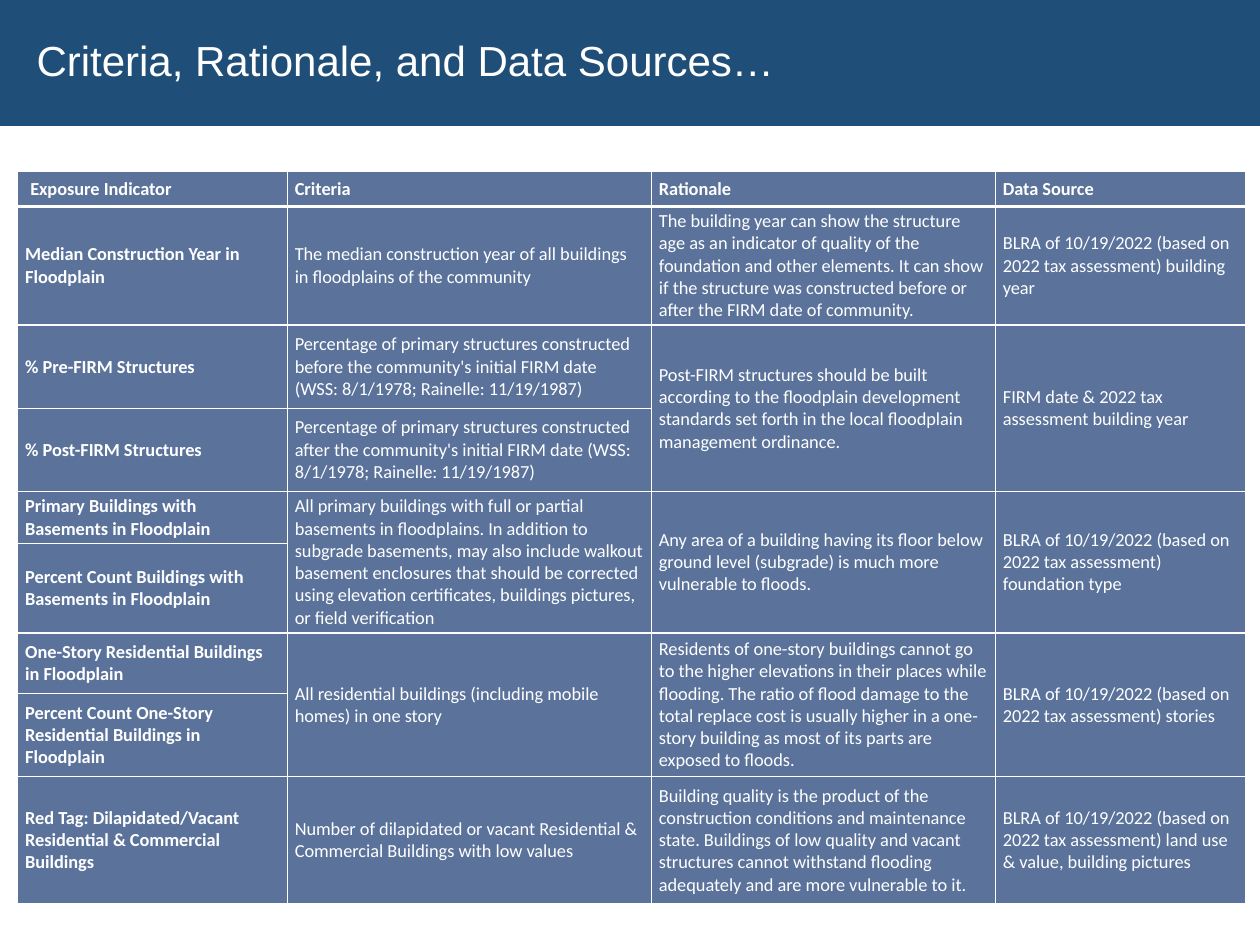
"""Build the slide listing exposure criteria, rationale and data sources."""
from lxml import etree
from pptx import Presentation
from pptx.dml.color import RGBColor
from pptx.enum import shapes, text
from pptx.oxml import ns
from pptx.util import Inches, Pt


def color(hex_code):
    return RGBColor.from_string(hex_code)


def add_border(cell, side, width, position):
    line = etree.Element(ns.qn(f"a:ln{side}"), w=str(Pt(width)))
    fill = etree.SubElement(line, ns.qn("a:solidFill"))
    etree.SubElement(fill, ns.qn("a:srgbClr"), val="FFFFFF")
    cell._tc.get_or_add_tcPr().insert(position, line)


BLRA = "BLRA of 10/19/2022 (based on 2022 tax assessment) "
FIRM = ("Percentage of primary structures constructed {} the community's initial "
        "FIRM date (WSS: 8/1/1978; Rainelle: 11/19/1987)")

# None continues the cell above
ROWS = [
    (0.27, "Exposure Indicator", "Criteria", "Rationale", "Data Source"),
    (0.94, "Median Construction Year in Floodplain",
     "The median construction year of all buildings in floodplains of the community",
     "The building year can show the structure age as an indicator of quality of the "
     "foundation and other elements. It can show if the structure was constructed "
     "before or after the FIRM date of community.",
     BLRA + "building year"),
    (0.66, "% Pre-FIRM Structures", FIRM.format("before"),
     "Post-FIRM structures should be built according to the floodplain development "
     "standards set forth in the local floodplain management ordinance.",
     "FIRM date & 2022 tax assessment building year"),
    (0.66, "% Post-FIRM Structures", FIRM.format("after"), None, None),
    (0.41, "Primary Buildings with Basements in Floodplain",
     "All primary buildings with full or partial basements in floodplains. In addition "
     "to subgrade basements, may also include walkout basement enclosures that should "
     "be corrected using elevation certificates, buildings pictures, or field "
     "verification",
     "Any area of a building having its floor below ground level (subgrade) is much "
     "more vulnerable to floods.",
     BLRA + "foundation type"),
    (0.71, "Percent Count Buildings with Basements in Floodplain", None, None, None),
    (0.48, "One-Story Residential Buildings in Floodplain",
     "All residential buildings (including mobile homes) in one story",
     "Residents of one-story buildings cannot go to the higher elevations in their "
     "places while flooding. The ratio of flood damage to the total replace cost is "
     "usually higher in a one-story building as most of its parts are exposed to floods.",
     BLRA + "stories"),
    (0.66, "Percent Count One-Story Residential Buildings in Floodplain",
     None, None, None),
    (1.01, "Red Tag: Dilapidated/Vacant Residential & Commercial Buildings",
     "Number of dilapidated or vacant Residential & Commercial Buildings with low values",
     "Building quality is the product of the construction conditions and maintenance "
     "state. Buildings of low quality and vacant structures cannot withstand flooding "
     "adequately and are more vulnerable to it.",
     BLRA + "land use & value, building pictures"),
]
COLUMN_WIDTHS = [2.14, 2.89, 2.73, 1.99]

deck = Presentation()
deck.slide_width, deck.slide_height = Inches(10), Inches(7.5)
slide = deck.slides.add_slide(deck.slide_layouts[6])

banner = slide.shapes.add_shape(
    shapes.MSO_SHAPE.RECTANGLE, 0, 0, Inches(10), Inches(1))
banner.shadow.inherit = False
banner.fill.solid()
banner.fill.fore_color.rgb = color("1F4E79")
banner.line.fill.background()
banner.text_frame.word_wrap = True
banner.text_frame.margin_left = Inches(0.29)
banner.text_frame.vertical_anchor = text.MSO_ANCHOR.MIDDLE
title = banner.text_frame.paragraphs[0]
title.text = "Criteria, Rationale, and Data Sources…"
title.alignment = text.PP_ALIGN.LEFT
title.line_spacing = 0.9
title.font.name, title.font.size = "Arial", Pt(24)
title.font.color.rgb = color("FFFFFF")

criteria = slide.shapes.add_table(
    len(ROWS), len(COLUMN_WIDTHS), Inches(0.14), Inches(1.36),
    Inches(sum(COLUMN_WIDTHS)), Inches(sum(row[0] for row in ROWS))).table
for column, width in zip(criteria.columns, COLUMN_WIDTHS):
    column.width = Inches(width)

for r, (height, *entries) in enumerate(ROWS):
    criteria.rows[r].height = Inches(height)
    for c, entry in enumerate(entries):
        cell = criteria.cell(r, c)
        cell.fill.solid()
        cell.fill.fore_color.rgb = color("5B739B")
        borders = {"L": 1, "R": 1, "T": 2.25 if r == 1 else 1, "B": 2.25 if r == 0 else 1}
        for position, (side, width) in enumerate(borders.items()):
            add_border(cell, side, width, position)
        if entry is None:
            criteria.cell(r - 1, c).merge(cell)
            continue
        cell.vertical_anchor = text.MSO_ANCHOR.MIDDLE
        if (r, c) != (0, 0):
            cell.margin_left = cell.margin_right = Inches(0.06)
            cell.margin_top = cell.margin_bottom = Inches(0.03)
        paragraph = cell.text_frame.paragraphs[0]
        paragraph.text = entry
        paragraph.font.name, paragraph.font.size = "Calibri", Pt(10.5)
        paragraph.font.bold = r == 0 or c == 0
        paragraph.font.color.rgb = color("FFFFFF")

deck.save("out.pptx")
